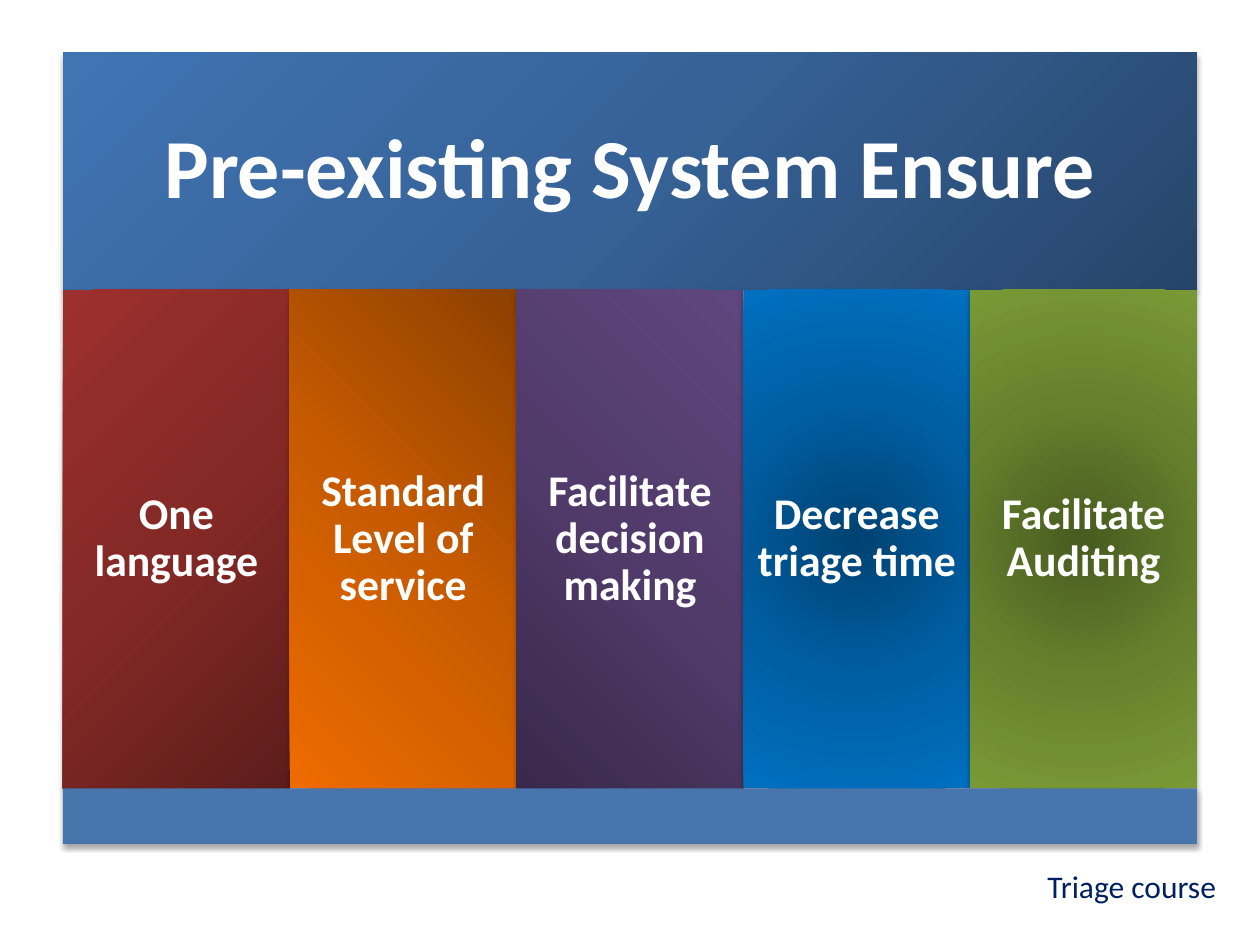
from pptx import Presentation
from pptx.dml.color import RGBColor
from pptx.enum.shapes import MSO_SHAPE
from pptx.enum.text import MSO_ANCHOR, MSO_AUTO_SIZE, PP_ALIGN
from pptx.oxml import parse_xml
from pptx.oxml.ns import nsdecls, qn
from pptx.util import Pt

RECT = MSO_SHAPE.RECTANGLE
MIDDLE = MSO_ANCHOR.MIDDLE
CENTER, RIGHT = PP_ALIGN.CENTER, PP_ALIGN.RIGHT
NO_AUTOFIT, GROW = MSO_AUTO_SIZE.NONE, MSO_AUTO_SIZE.SHAPE_TO_FIT_TEXT

# Layout in points
LEFT, WIDTH = 36, 648
TITLE_TOP, TITLE_H = 30, 135.6
COLUMN_TOP, COLUMN_H = TITLE_TOP + TITLE_H, 285
BASE_TOP, BASE_H = COLUMN_TOP + COLUMN_H, 31.7

# Gradient: colours from the focus outwards, and the focus as l, t, r, b percentages
TITLE_GRADIENT = (("26456A", "366297", "4074B3"), (100, 100, 0, 0))
COLUMNS = [
    ("One language", ("5D1D1B", "842926", "9C302E"), (100, 100, 0, 0)),
    ("Standard Level of service", ("8D4000", "C85B00", "EE6B00"), (100, 0, 0, 100)),
    ("Facilitate decision making", ("39294B", "513B6B", "60467E"), (0, 100, 100, 0)),
    ("Decrease triage time", ("004272", "005EA2", "0070C0"), (50, 50, 50, 50)),
    ("Facilitate Auditing", ("485B20", "66812D", "799936"), (50, 50, 50, 50)),
]


def rgb(color):
    return RGBColor.from_string(color)


def place(s, left, top, width, height):
    s.left, s.top, s.width, s.height = (Pt(v) for v in (left, top, width, height))


def set_gradient(s, colors, focus):
    stops = "".join(
        f'<a:gs pos="{i * 50000}"><a:srgbClr val="{c}"/></a:gs>'
        for i, c in enumerate(colors))
    l, t, r, b = (v * 1000 for v in focus)
    s.fill.gradient()
    spPr = s.element.spPr
    spPr.replace(spPr.find(qn("a:gradFill")), parse_xml(
        f'<a:gradFill {nsdecls("a")} rotWithShape="1"><a:gsLst>{stops}</a:gsLst>'
        f'<a:path path="circle"><a:fillToRect l="{l}" t="{t}" r="{r}" b="{b}"/>'
        '</a:path></a:gradFill>'))


def set_shadow(s):
    s.line.fill.background()
    s.shadow.inherit = False
    s.element.spPr.find(qn("a:effectLst")).append(parse_xml(
        f'<a:outerShdw {nsdecls("a")} blurRad="40000" dist="23000" dir="5400000" '
        'rotWithShape="0"><a:srgbClr val="000000"><a:alpha val="35000"/>'
        '</a:srgbClr></a:outerShdw>'))


def set_text(s, text, size, color="FFFFFF", bold=True, align=CENTER):
    tf = s.text_frame
    tf.text = text
    tf.word_wrap = True
    p = tf.paragraphs[0]
    p.alignment = align
    p._p.get_or_add_pPr().set("rtl", "1")
    font = p.runs[0].font
    font.name, font.size, font.bold = "Calibri", Pt(size), bold
    font.color.rgb = rgb(color)
    return tf


def style_panel(s, text, size, inset, colors, focus):
    set_gradient(s, colors, focus)
    set_shadow(s)
    tf = set_text(s, text, size)
    tf.auto_size = NO_AUTOFIT
    tf.vertical_anchor = MIDDLE
    tf.margin_left = tf.margin_right = tf.margin_top = tf.margin_bottom = Pt(inset)
    tf.paragraphs[0].line_spacing = 0.9


def add_rect(slide, *box):
    s = slide.shapes.add_shape(RECT, 0, 0, 0, 0)
    place(s, *box)
    return s


def add_columns(slide):
    width = WIDTH / len(COLUMNS)
    for i, (text, colors, focus) in enumerate(COLUMNS):
        s = add_rect(slide, LEFT + i * width, COLUMN_TOP, width, COLUMN_H)
        style_panel(s, text, 25, 7, colors, focus)


def add_base(slide):
    s = add_rect(slide, LEFT, BASE_TOP, WIDTH, BASE_H)
    s.fill.solid()
    s.fill.fore_color.rgb = rgb("4875AC")
    set_shadow(s)


def add_course_label(slide):
    s = slide.shapes.add_textbox(0, 0, 0, 0)
    place(s, 570, 492, 132, 29)
    tf = set_text(s, "Triage course", 18, "002060", False, RIGHT)
    tf.auto_size = GROW


def main():
    prs = Presentation()
    prs.slide_width, prs.slide_height = Pt(720), Pt(540)
    slide = prs.slides.add_slide(prs.slide_layouts[5])

    # Title banner
    title = slide.shapes.title
    place(title, LEFT, TITLE_TOP, WIDTH, TITLE_H)
    style_panel(title, "Pre-existing System Ensure", 48, 14.4, *TITLE_GRADIENT)

    # Columns, base bar and course label
    add_columns(slide)
    add_base(slide)
    add_course_label(slide)

    prs.save("out.pptx")


if __name__ == "__main__":
    main()
